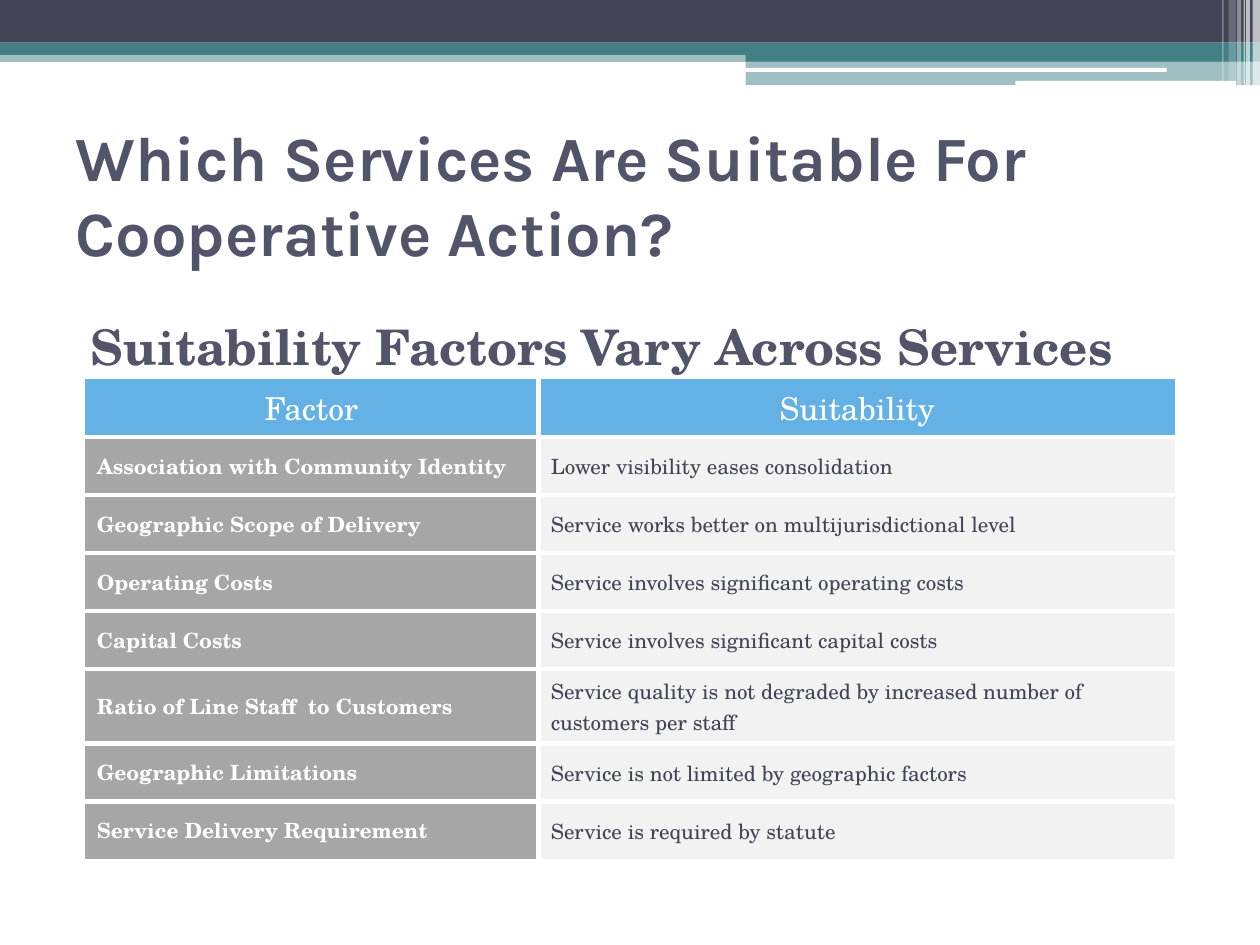
"""Build a slide with a table of suitability factors for cooperative services."""
from lxml.etree import SubElement
from pptx import Presentation
from pptx.dml.color import RGBColor
from pptx.enum.shapes import MSO_SHAPE
from pptx.enum.text import MSO_ANCHOR, MSO_AUTO_SIZE, PP_ALIGN
from pptx.oxml.ns import qn
from pptx.util import Cm, Pt

WHITE = RGBColor(0xFF, 0xFF, 0xFF)
NAVY = RGBColor(0x42, 0x44, 0x56)
SLATE = RGBColor(0x52, 0x54, 0x6A)
TEAL = RGBColor(0x43, 0x80, 0x86)
SKY = RGBColor(0x63, 0xB1, 0xE5)
GREY = RGBColor(0xA6, 0xA6, 0xA6)
PALE = RGBColor(0xF2, 0xF2, 0xF2)
SERIF = "TeX Gyre Schola"


def add_band(left, top, width, height, color, opacity=100, preset=MSO_SHAPE.RECTANGLE):
    band = slide.shapes.add_shape(preset, Cm(left), Cm(top), Cm(width), Cm(height))
    band.shadow.inherit = False
    band.line.fill.background()
    band.fill.solid()
    band.fill.fore_color.rgb = color
    if opacity < 100:
        tint = band.fill._xPr.find(qn("a:solidFill"))[0]
        SubElement(tint, qn("a:alpha"), val=str(opacity * 1000))


def style_font(paragraph, name, size, color, bold):
    font = paragraph.font
    font.name, font.size, font.bold = name, Pt(size), bold
    font.color.rgb = color


prs = Presentation()
prs.slide_width, prs.slide_height = Cm(25.4), Cm(19.05)
slide = prs.slides.add_slide(prs.slide_layouts[1])

add_band(0, 1.02, 25.4, 0.23, TEAL, 50)
add_band(0, 0, 25.4, 0.86, NAVY)
add_band(0, 0.86, 25.4, 0.25, TEAL)
add_band(15.03, 0.99, 10.37, 0.25, TEAL)
add_band(15.03, 1.22, 10.37, 0.5, TEAL, 50)
for left, top, width, height in [(15.01, 1.37, 8.51, 0.08), (20.47, 1.63, 4.45, 0.1)]:
    add_band(left, top, width, height, WHITE, preset=MSO_SHAPE.ROUNDED_RECTANGLE)
for left, width, height, opacity in [
    (25.25, 0.15, 1.73, 65),
    (25.12, 0.08, 1.73, 65),
    (25.07, 0.03, 1.73, 60),
    (24.94, 0.08, 1.73, 40),
    (24.77, 0.15, 1.63, 20),
    (24.64, 0.03, 1.63, 30),
]:
    add_band(left, 0, width, height, WHITE, opacity)

question, subheading = slide.placeholders
for placeholder, top, height, text, anchor, name, size in [
    (question, 3.18, 2.97, "Which Services Are Suitable For Cooperative Action?",
     MSO_ANCHOR.BOTTOM, "Karla", 36),
    (subheading, 6.25, 12.01, "Suitability Factors Vary Across Services",
     MSO_ANCHOR.TOP, SERIF, 28),
]:
    slide.shapes._spTree.append(placeholder._element)
    placeholder.left, placeholder.top = Cm(1.27), Cm(top)
    placeholder.width, placeholder.height = Cm(22.86), Cm(height)
    frame = placeholder.text_frame
    frame.text = text
    frame.auto_size = MSO_AUTO_SIZE.NONE
    frame.vertical_anchor = anchor
    frame.paragraphs[0].alignment = PP_ALIGN.LEFT
    style_font(frame.paragraphs[0], name, size, SLATE, True)
question.text_frame.margin_bottom = Cm(0.72)
subheading.text_frame.paragraphs[0].space_before = Pt(3)
indents = subheading.text_frame.paragraphs[0]._p.get_or_add_pPr()
indents.set("marL", str(Cm(1.02)))
indents.set("indent", str(Cm(-0.71)))
SubElement(indents, qn("a:buNone"))

factors = [
    ("Factor", "Suitability"),
    ("Association with Community Identity", "Lower visibility eases consolidation"),
    ("Geographic Scope of Delivery", "Service works better on multijurisdictional level"),
    ("Operating Costs", "Service involves significant operating costs"),
    ("Capital Costs", "Service involves significant capital costs"),
    ("Ratio of Line Staff  to Customers",
     "Service quality is not degraded by increased number of customers per staff"),
    ("Geographic Limitations", "Service is not limited by geographic factors"),
    ("Service Delivery Requirement", "Service is required by statute"),
]
last = len(factors) - 1
table = slide.shapes.add_table(
    len(factors), 2, Cm(1.7), Cm(7.62), Cm(22.01), Cm(1.17 * len(factors))
).table
table.columns[0].width, table.columns[1].width = Cm(9.15), Cm(12.86)

for row, entries in enumerate(factors):
    table.rows[row].height = Cm(1.17)
    for column, entry in enumerate(entries):
        cell = table.cell(row, column)
        cell.text = entry
        cell.vertical_anchor = MSO_ANCHOR.MIDDLE
        outer = {"L": column == 0, "R": column == 1, "T": row == 0, "B": row == last}
        for side, is_outer in outer.items():
            border = SubElement(cell._tc.get_or_add_tcPr(), qn(f"a:ln{side}"),
                                w=str(Pt(1 if is_outer else 3)))
            SubElement(SubElement(border, qn("a:solidFill")), qn("a:srgbClr"), val=str(WHITE))
        cell.fill.solid()
        paragraph = cell.text_frame.paragraphs[0]
        if row == 0:
            cell.fill.fore_color.rgb = SKY
            paragraph.alignment = PP_ALIGN.CENTER
            style_font(paragraph, SERIF, 18, WHITE, False)
        elif column == 0:
            cell.fill.fore_color.rgb = GREY
            style_font(paragraph, SERIF, 12, WHITE, True)
        else:
            cell.fill.fore_color.rgb = PALE
            style_font(paragraph, SERIF, 12, NAVY, False)

prs.save("out.pptx")
